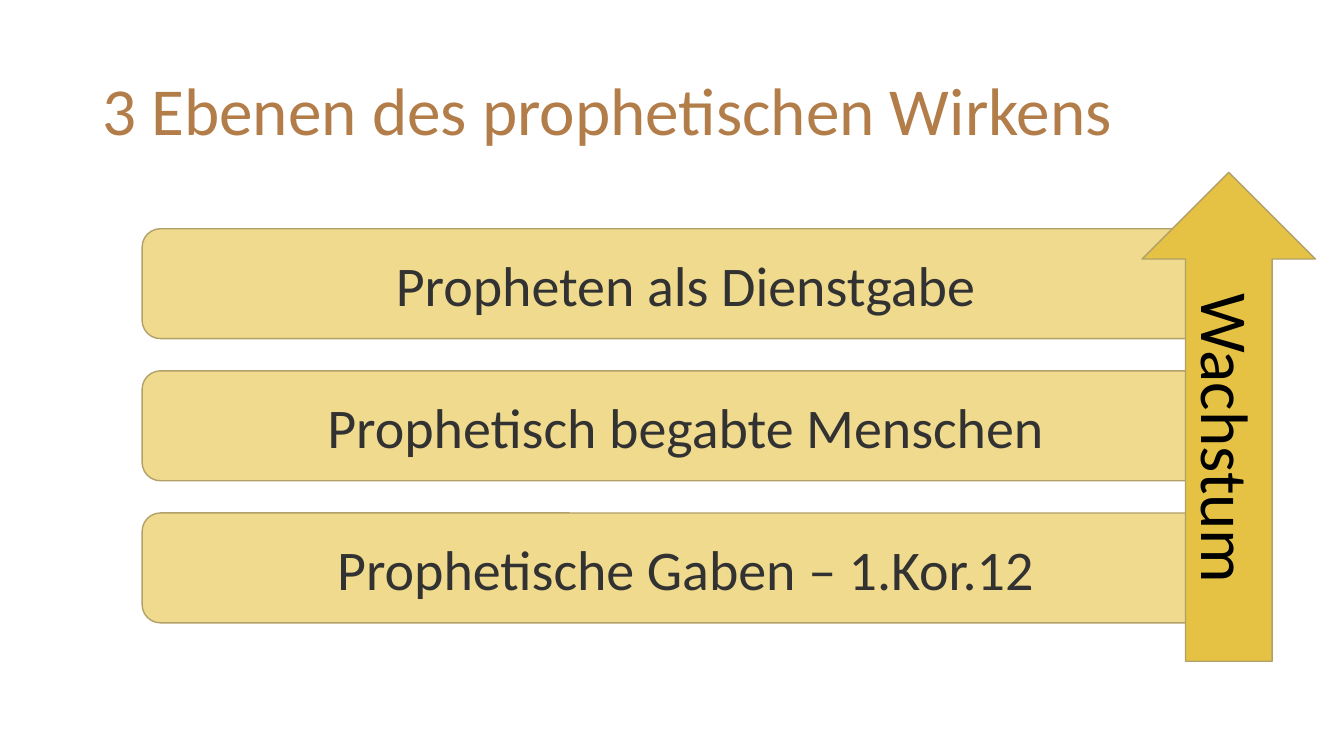
from dataclasses import dataclass

from pptx import Presentation
from pptx.dml.color import RGBColor
from pptx.enum.shapes import MSO_SHAPE
from pptx.enum.text import MSO_ANCHOR, PP_ALIGN
from pptx.shapes.autoshape import Shape
from pptx.slide import Slide
from pptx.util import Pt

FONT = "Calibri"
COLORS = {
    "title": "B27D49",
    "level": "EFDA8E",
    "level_text": "323232",
    "arrow": "E5C243",
    "arrow_text": "000000",
    "outline": "B1A169",
}
LEVELS = (
    "Propheten als Dienstgabe",
    "Prophetisch begabte Menschen",
    "Prophetische Gaben – 1.Kor.12",
)
LEVEL_TOP = 163.4
LEVEL_PITCH = 101.5


@dataclass(frozen=True)
class Block:
    text: str
    kind: MSO_SHAPE
    left: float
    top: float
    width: float
    height: float
    fill: str
    text_color: str
    font_size: float


def write_text(shape: Shape, text: str, size: float, color: str, alignment: PP_ALIGN) -> None:
    frame = shape.text_frame
    frame.text = text
    frame.word_wrap = True
    frame.vertical_anchor = MSO_ANCHOR.MIDDLE
    paragraph = frame.paragraphs[0]
    paragraph.alignment = alignment
    font = paragraph.runs[0].font
    font.name = FONT
    font.size = Pt(size)
    font.color.rgb = RGBColor.from_string(COLORS[color])


def draw_block(slide: Slide, block: Block) -> Shape:
    shape = slide.shapes.add_shape(
        block.kind, Pt(block.left), Pt(block.top), Pt(block.width), Pt(block.height)
    )
    shape.shadow.inherit = False
    shape.fill.solid()
    shape.fill.fore_color.rgb = RGBColor.from_string(COLORS[block.fill])
    shape.line.color.rgb = RGBColor.from_string(COLORS["outline"])
    shape.line.width = Pt(1)
    write_text(shape, block.text, block.font_size, block.text_color, PP_ALIGN.CENTER)
    return shape


def main() -> None:
    presentation = Presentation()
    presentation.slide_width = Pt(960)
    presentation.slide_height = Pt(540)
    slide = presentation.slides.add_slide(presentation.slide_layouts[6])

    # Title
    title = slide.shapes.add_textbox(Pt(66), Pt(28.75), Pt(828), Pt(104.4))
    write_text(title, "3 Ebenen des prophetischen Wirkens", 48, "title", PP_ALIGN.LEFT)
    title.text_frame.paragraphs[0].line_spacing = 0.9

    # Three levels
    for index, text in enumerate(LEVELS):
        top = LEVEL_TOP + index * LEVEL_PITCH
        draw_block(slide, Block(text, MSO_SHAPE.ROUNDED_RECTANGLE, 101.5, top, 776.2, 78.5,
                                "level", "level_text", 40))

    # Growth arrow, turned to point upwards with its text running down
    arrow = draw_block(slide, Block("Wachstum", MSO_SHAPE.DOWN_ARROW, 815.8, 123.1, 123.8, 349.2,
                                    "arrow", "arrow_text", 48))
    arrow.rotation = 180
    arrow.element.txBody.bodyPr.set("vert", "vert270")

    presentation.save("out.pptx")


if __name__ == "__main__":
    main()
